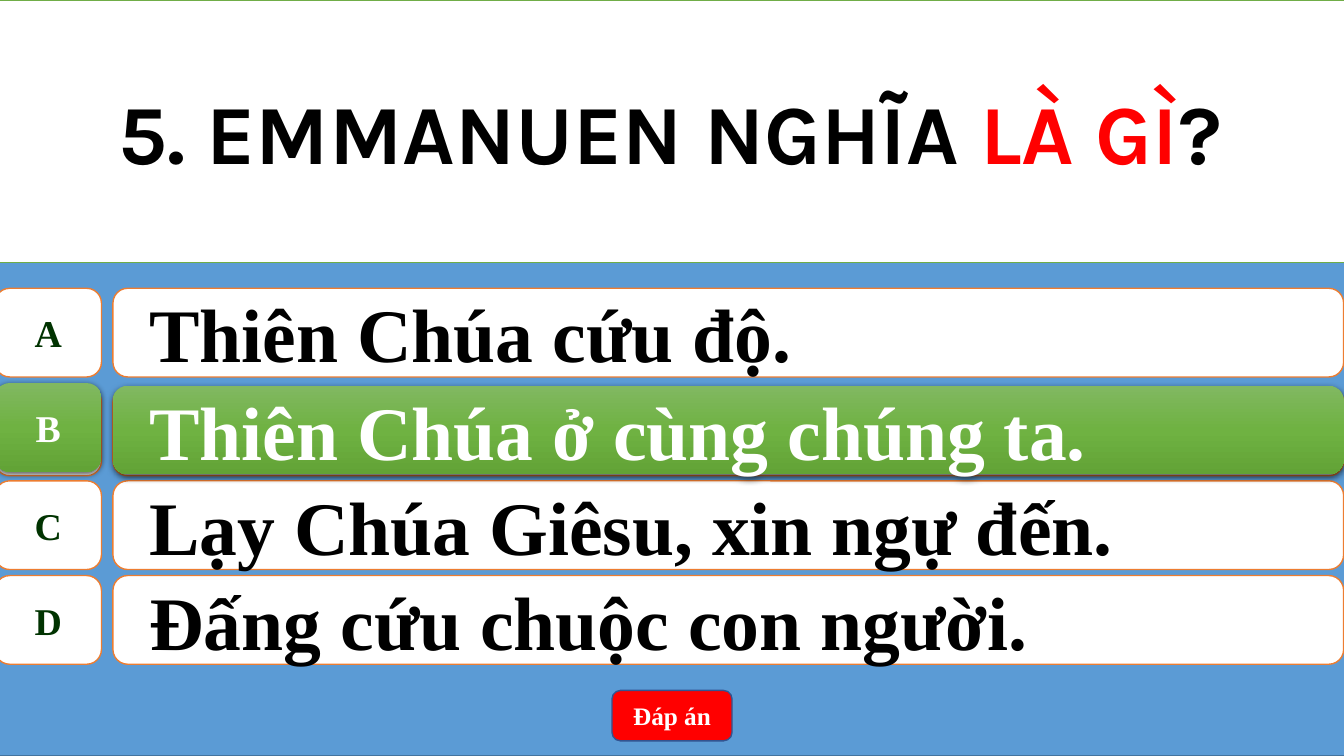
from copy import deepcopy
from dataclasses import dataclass

from lxml import etree
from pptx import Presentation
from pptx.dml.color import RGBColor
from pptx.enum.shapes import MSO_SHAPE
from pptx.enum.text import MSO_ANCHOR, MSO_AUTO_SIZE, PP_ALIGN
from pptx.oxml.ns import qn
from pptx.util import Emu, Inches, Pt

RECT = MSO_SHAPE.RECTANGLE
ROUND = MSO_SHAPE.ROUNDED_RECTANGLE
PLATE = MSO_SHAPE.FLOWCHART_ALTERNATE_PROCESS
LEFT, CENTER = PP_ALIGN.LEFT, PP_ALIGN.CENTER
MIDDLE = MSO_ANCHOR.MIDDLE
FIXED = MSO_AUTO_SIZE.NONE


@dataclass(frozen=True)
class Theme:
    sky: str = "5B9BD5"
    edge: str = "43739E"
    white: str = "FFFFFF"
    black: str = "000000"
    red: str = "FF0000"
    navy: str = "325491"
    orange: str = "ED7D31"
    forest: str = "003300"
    green: str = "70AD47"
    glow: tuple = ("81B861", "6FB242", "62A336")
    serif: str = "Times New Roman"
    sans: str = "Karla"
    ask: int = 60
    reply: int = 54
    mark: int = 27
    small: int = 18


THEME = Theme()
WIDE, HIGH = 13.33, 7.5
FULL = (-0.05, 0, 13.39, HIGH)
TOPS = (2.86, 3.84, 4.77, 5.71)
ROW = 0.88
ITEMS = (
    ("A", "Thiên Chúa cứu độ."),
    ("B", "Thiên Chúa ở cùng chúng ta."),
    ("C", "Lạy Chúa Giêsu, xin ngự đến."),
    ("D", "Đấng cứu chuộc con người."),
)
RIGHT = 1


def part(box, left, top, width, height):
    x, y, w, h = box
    return x + left * w, y + top * h, width * w, height * h


def write(shape, runs, size, font=THEME.serif, align=CENTER, wrap=True, hang=False):
    frame = shape.text_frame
    frame.auto_size = FIXED
    frame.word_wrap = wrap
    frame.vertical_anchor = MIDDLE
    para = frame.paragraphs[0]
    para.alignment = align
    if hang:
        para.level = 1
        props = para._p.get_or_add_pPr()
        props.set("marL", str(Inches(0.5)))
        props.set("indent", str(Inches(-0.28)))
    for words, color in runs:
        run = para.add_run()
        run.text = words
        run.font.name = font
        run.font.size = Pt(size)
        run.font.bold = True
        run.font.color.rgb = RGBColor.from_string(color)


def paint(shape, fill, line):
    shape.fill.solid()
    shape.fill.fore_color.rgb = RGBColor.from_string(fill)
    shape.line.color.rgb = RGBColor.from_string(line)
    shape.line.width = Pt(1)


def shine(shape):
    shape.fill.gradient()
    shape.fill.gradient_angle = 270
    stops = shape.fill._fill._gradFill.find(qn("a:gsLst"))
    stops.insert(1, deepcopy(stops[0]))
    for stop, color, place in zip(shape.fill.gradient_stops, THEME.glow, (0, 0.5, 1)):
        stop.color.rgb = RGBColor.from_string(color)
        stop.position = place
    shape.line.fill.background()
    effects = shape._element.spPr.find(qn("a:effectLst"))
    shade = etree.SubElement(
        effects, qn("a:outerShdw"), blurRad=str(Pt(4.5)), dist=str(Pt(1.5)),
        dir="5400000", algn="ctr", rotWithShape="0")
    color = etree.SubElement(shade, qn("a:srgbClr"), val=THEME.black)
    etree.SubElement(color, qn("a:alpha"), val="63000")


def block(shapes, kind, box):
    shape = shapes.add_shape(kind, *map(Inches, box))
    shape.shadow.inherit = False
    return shape


def row(slide, box, mark=None, reply=None, lit=False):
    group = slide.shapes.add_group_shape().shapes
    label = block(group, PLATE, part(box, 0, 0, 0.079, 1))
    drop = 0.03 if lit else 0
    bar = block(group, ROUND, part(box, 0.0875, drop, 0.9125, 1))
    for shape in (label, bar):
        if lit:
            shine(shape)
        else:
            paint(shape, THEME.white, THEME.orange)
    if mark:
        write(label, [(mark, THEME.white if lit else THEME.forest)],
              THEME.mark, wrap=False)
        write(bar, [(reply, THEME.white if lit else THEME.black)],
              THEME.reply, align=LEFT, hang=True)


def choices(slide, box):
    x, _, w, _ = box
    for at, (top, item) in enumerate(zip(TOPS, ITEMS)):
        row(slide, (x, top, w, ROW), *(() if at == RIGHT else item))
    row(slide, (x, TOPS[RIGHT] - 0.04, w, ROW), *ITEMS[RIGHT], lit=True)


def button(slide, box):
    shape = block(slide.shapes, ROUND, box)
    paint(shape, THEME.red, THEME.navy)
    write(shape, [("Đáp án", THEME.white)], THEME.small)


def header(slide, box):
    title = slide.shapes.title
    title.left, title.top, title.width, title.height = map(Inches, box)
    paint(title, THEME.white, THEME.green)
    write(title, [("5. EMMANUEN NGHĨA ", THEME.black), ("LÀ GÌ", THEME.red),
                  ("?", THEME.black)], THEME.ask, font=THEME.sans)
    slide.shapes._spTree.append(title._element)


def main():
    deck = Presentation()
    deck.slide_width = Emu(Inches(WIDE))
    deck.slide_height = Emu(Inches(HIGH))
    slide = deck.slides.add_slide(deck.slide_layouts[5])
    paint(block(slide.shapes, RECT, FULL), THEME.sky, THEME.edge)
    choices(slide, part(FULL, 0, 0, 0.999, 1))
    button(slide, (6.07, 6.85, 1.19, 0.5))
    header(slide, part(FULL, 0, 0, 1, 0.347))
    deck.save("out.pptx")


if __name__ == "__main__":
    main()
